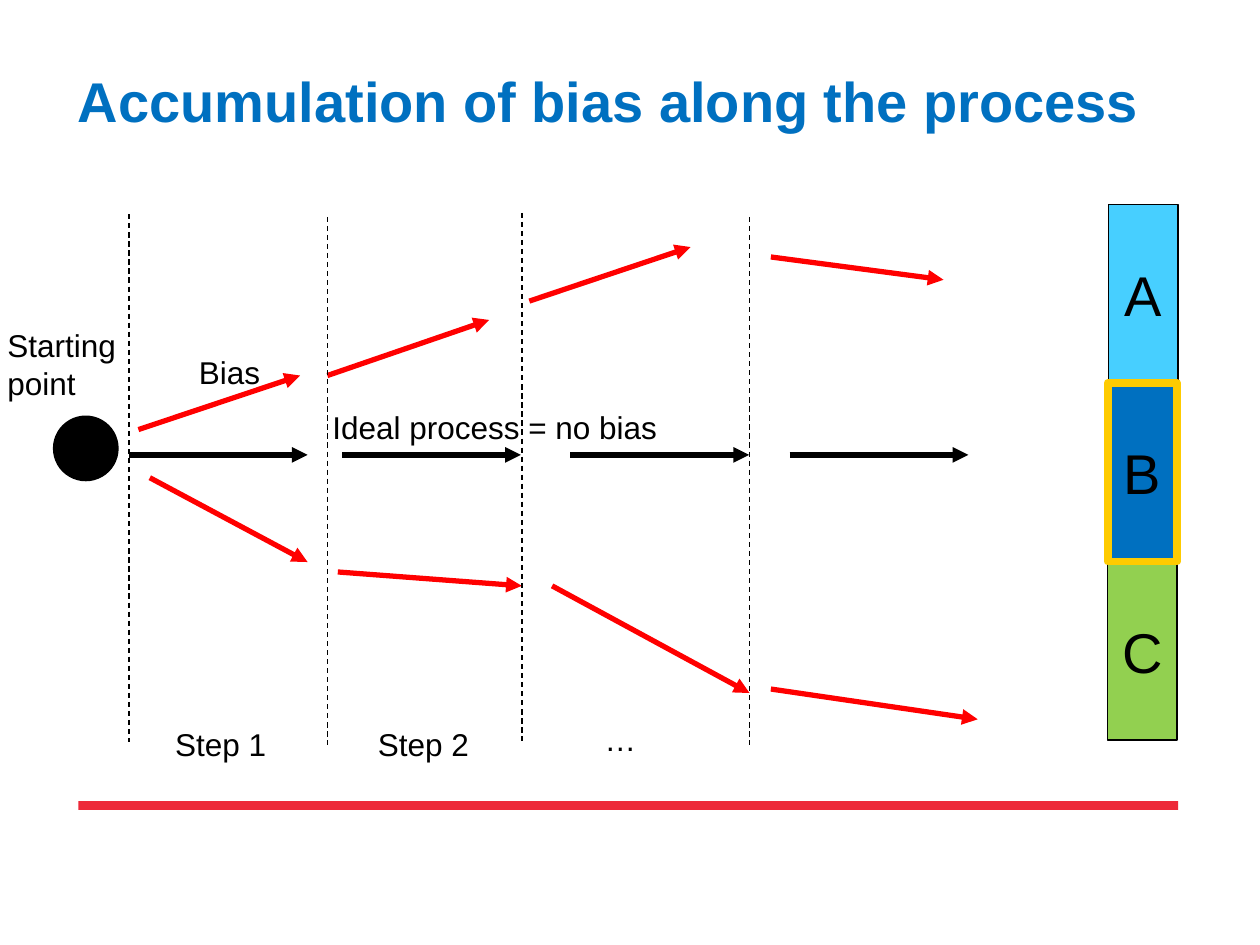
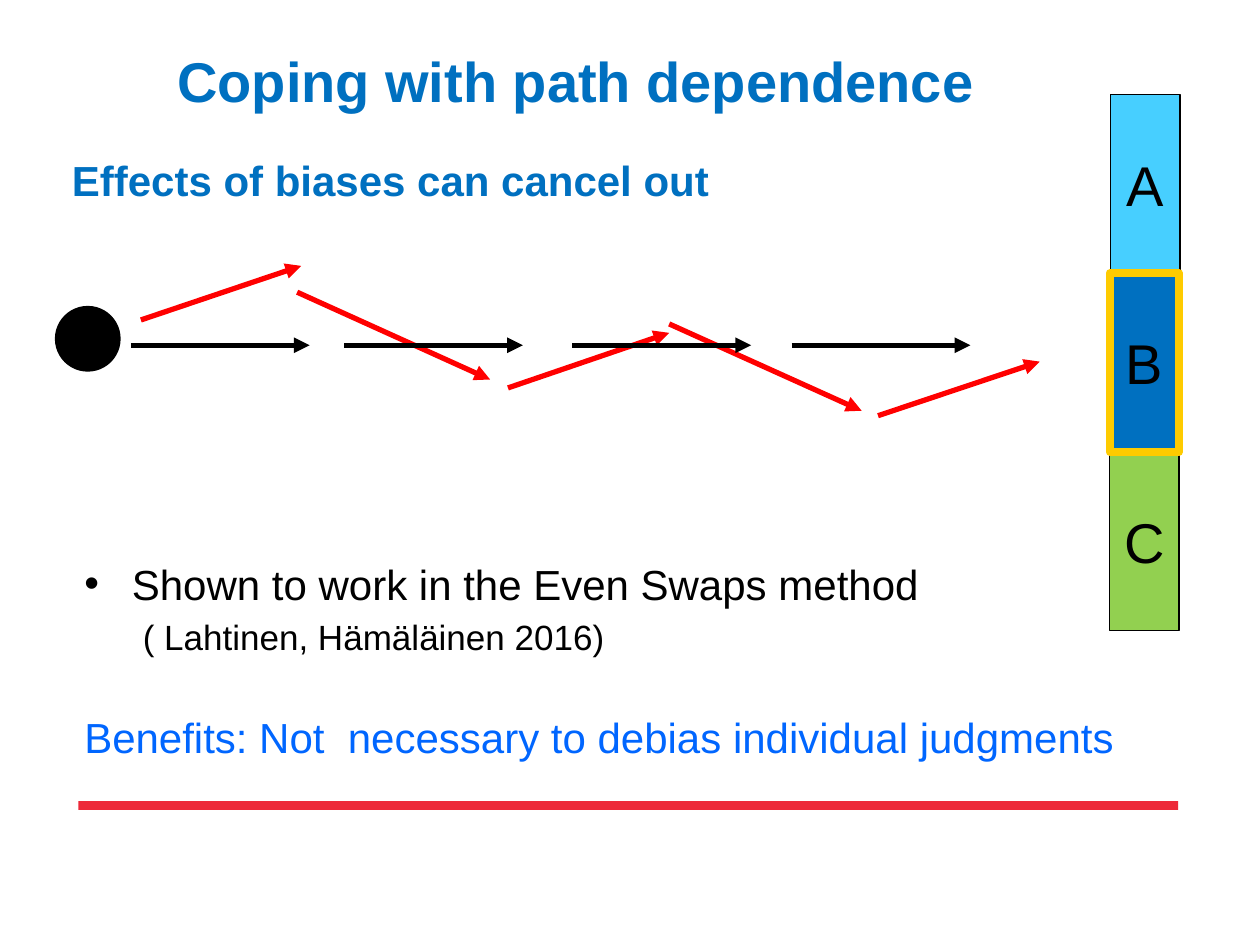
"""Build two slides on how bias accumulates and cancels out along a process."""
from lxml import etree
from pptx import Presentation
from pptx.dml import color
from pptx.enum import dml, shapes, text
from pptx.oxml import ns
from pptx.util import Cm, Pt

BLACK = color.RGBColor(0x00, 0x00, 0x00)
BLUE = color.RGBColor(0x00, 0x70, 0xC0)
BRIGHT_BLUE = color.RGBColor(0x00, 0x66, 0xFF)
SKY = color.RGBColor(0x47, 0xCF, 0xFF)
GREEN = color.RGBColor(0x92, 0xD0, 0x50)
GOLD = color.RGBColor(0xFE, 0xCB, 0x00)
RED = color.RGBColor(0xFF, 0x00, 0x00)
BAND_RED = color.RGBColor(0xED, 0x29, 0x39)

TITLE = {"size": Pt(32), "bold": True}
SUBTITLE = {"size": Pt(24), "bold": True}
LETTER = {"size": Pt(32)}
LABEL = {"size": Pt(18)}
BODY = {"size": Pt(24)}
CITATION = {"size": Pt(20)}
NO_INSET = {"margin_left": 0, "margin_top": 0, "margin_right": 0, "margin_bottom": 0}
FIT = {"auto_size": text.MSO_AUTO_SIZE.SHAPE_TO_FIT_TEXT}


def write(p, words, fmt, rgb=BLACK):
    r = p.add_run()
    r.text = words
    r.font.name = "Arial"
    r.font.color.rgb = rgb
    for key, value in fmt.items():
        setattr(r.font, key, value)


def draw_line(s, ends, rgb, width, arrow=True):
    c = s.shapes.add_connector(shapes.MSO_CONNECTOR.STRAIGHT, *[Cm(v) for v in ends])
    c.line.color.rgb = rgb
    c.line.width = Pt(width)
    if arrow:
        etree.SubElement(c.line._get_or_add_ln(), ns.qn("a:tailEnd"), type="triangle")
    else:
        c.line.dash_style = dml.MSO_LINE.DASH
    etree.SubElement(c._element.spPr, ns.qn("a:effectLst"))


STEP = 3.6
IDEAL_STARTS = (2.6, 6.9, 11.5, 15.92)
BARS = (("A", 22.35, 0, SKY, BLACK, 0.75),
        ("C", 22.33, 2, GREEN, BLACK, 0.75),
        ("B", 22.33, 1, BLUE, GOLD, 4.5))

BIASED_UP_AND_DOWN = (
    (2.79, 8.66, 6.05, 7.57), (6.6, 7.57, 9.86, 6.45),
    (10.67, 6.07, 13.92, 4.98), (15.54, 5.18, 19.02, 5.64),
    (3.02, 9.63, 6.2, 11.33), (6.81, 11.53, 10.52, 11.81),
    (11.13, 11.81, 15.11, 13.97), (15.54, 13.89, 19.71, 14.5))
CANCELLING = (
    (2.84, 6.45, 6.07, 5.36), (5.99, 5.89, 9.88, 7.65),
    (10.24, 7.82, 13.49, 6.71), (13.49, 6.53, 17.37, 8.28),
    (17.7, 8.38, 20.96, 7.29))

TITLES_1 = (
    ("Accumulation of bias along the process", (1.57, 1.35, 22.17, 3), TITLE, NO_INSET, None),)
TITLES_2 = (
    ("Effects of biases can cancel out", (1.45, 3.12, 22.17, 1.96), SUBTITLE, NO_INSET, None),
    ("Coping with path dependence", (2.39, 0.81, 18.44, 1.63), TITLE, FIT, text.PP_ALIGN.CENTER))
SLIDES = ((0, 9.17, BIASED_UP_AND_DOWN, TITLES_1),
          (0.04, 6.96, CANCELLING, TITLES_2))

prs = Presentation()
prs.slide_width, prs.slide_height = Cm(25.4), Cm(19.05)

for shift, axis, biased, titles in SLIDES:
    s = prs.slides.add_slide(prs.slide_layouts[6])

    band = s.shapes.add_shape(shapes.MSO_SHAPE.RECTANGLE, Cm(1.58), Cm(16.15), Cm(22.17), Cm(0.18))
    band.shadow.inherit = False
    band.fill.solid()
    band.fill.fore_color.rgb = BAND_RED
    band.line.fill.background()

    for words, box, fmt, frame, align in titles:
        tf = s.shapes.add_textbox(*[Cm(v) for v in box]).text_frame
        tf.word_wrap = True
        for key, value in frame.items():
            setattr(tf, key, value)
        p = tf.paragraphs[0]
        p.alignment = align
        write(p, words, fmt, BLUE)

    for letter, left, row, fill, outline, width in BARS:
        sp = s.shapes.add_shape(shapes.MSO_SHAPE.RECTANGLE, Cm(left + shift),
                                Cm(axis - 5.05 + row * STEP), Cm(1.4), Cm(STEP))
        sp.shadow.inherit = False
        sp.fill.solid()
        sp.fill.fore_color.rgb = fill
        sp.line.color.rgb = outline
        sp.line.width = Pt(width)
        tf = sp.text_frame
        tf.word_wrap = False
        tf.vertical_anchor = text.MSO_ANCHOR.MIDDLE
        p = tf.paragraphs[0]
        p.alignment = text.PP_ALIGN.CENTER
        write(p, letter, LETTER)

    start = s.shapes.add_shape(shapes.MSO_SHAPE.OVAL, Cm(1.08 + shift), Cm(axis - 0.78), Cm(1.3), Cm(1.3))
    start.shadow.inherit = False
    start.fill.solid()
    start.fill.fore_color.rgb = BLACK
    start.line.color.rgb = BLACK
    start.line.width = Pt(0.75)

    for ends in biased:
        draw_line(s, ends, RED, 3)
    for x in IDEAL_STARTS:
        draw_line(s, (x + shift, axis, x + shift + STEP, axis), BLACK, 3)

accumulation, coping = prs.slides

for x, top in ((2.6, 4.32), (6.6, 4.37), (10.52, 4.29), (15.11, 4.37)):
    draw_line(accumulation, (x, top, x, top + 10.64), BLACK, 0.75, arrow=False)

for lines, left, top, width, height in (
        (["Ideal process = no bias"], 6.45, 8.1, 7.11, 1.02),
        (["Starting", "point"], -0.1, 6.45, 2.9, 1.8),
        (["Bias"], 3.76, 6.99, 1.75, 1.02),
        (["Step 1"], 3.28, 14.5, 2.36, 1.02),
        (["Step 2"], 7.37, 14.5, 2.36, 1.02),
        (["…"], 11.94, 14.4, 1.14, 1.02)):
    tf = accumulation.shapes.add_textbox(Cm(left), Cm(top), Cm(width), Cm(height)).text_frame
    tf.word_wrap = False
    tf.auto_size = FIT["auto_size"]
    for i, words in enumerate(lines):
        write(tf.add_paragraph() if i else tf.paragraphs[0], words, LABEL)

tf = coping.shapes.add_textbox(Cm(1.45), Cm(11.13), Cm(22.63), Cm(5.2)).text_frame
tf.word_wrap = True
for i, (words, fmt, rgb, gap, margin, indent) in enumerate((
        ("Shown to work in the Even Swaps method", BODY, BLACK, 0, 0.96, -0.96),
        ("( Lahtinen, Hämäläinen 2016)", CITATION, BLACK, 4, 1.18, 0),
        ("Benefits: Not  necessary to debias individual judgments", BODY, BRIGHT_BLUE, 31, 0, 0))):
    p = tf.add_paragraph() if i else tf.paragraphs[0]
    p.space_before = Pt(gap)
    pPr = p._p.get_or_add_pPr()
    pPr.set("marL", str(Cm(margin)))
    pPr.set("indent", str(Cm(indent)))
    if indent:
        etree.SubElement(pPr, ns.qn("a:buFont"), typeface="Arial")
        etree.SubElement(pPr, ns.qn("a:buChar"), char="•")
    write(p, words, fmt, rgb)

prs.save("out.pptx")
